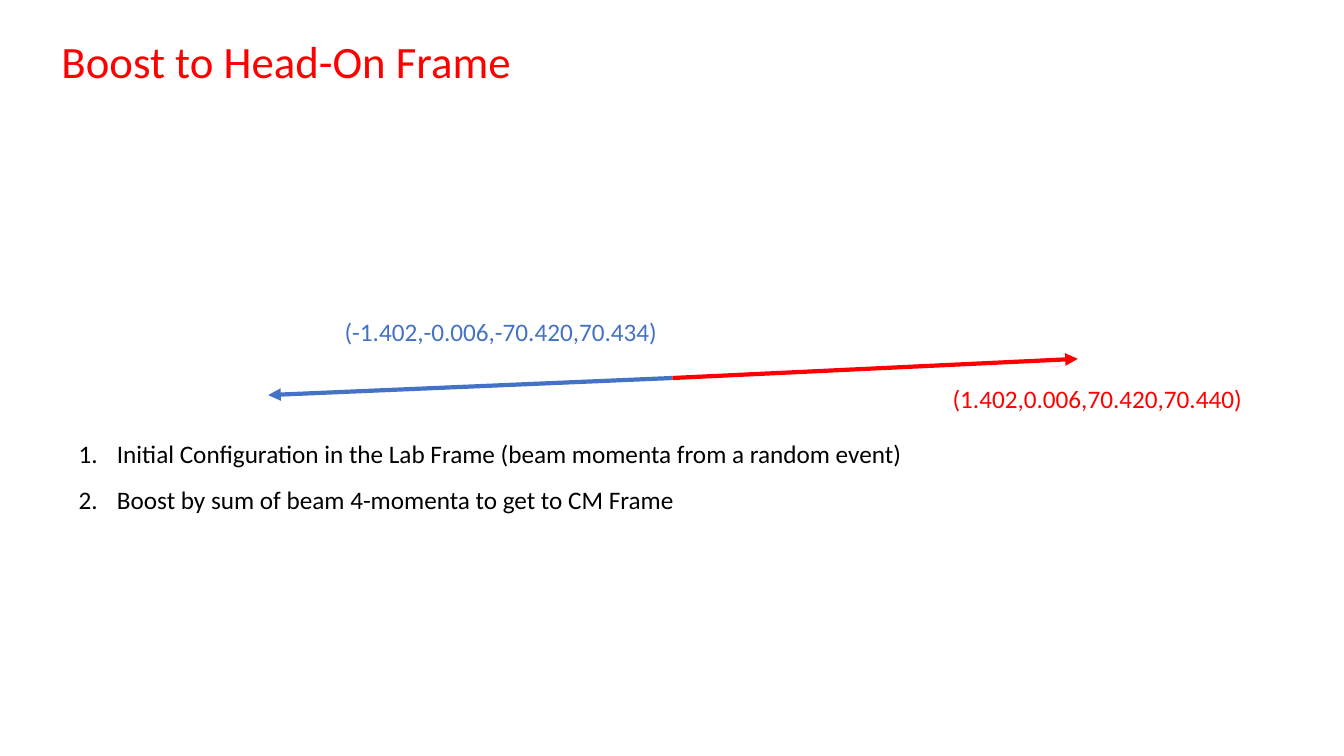
from pptx import Presentation
from pptx.dml.color import RGBColor
from pptx.enum.shapes import MSO_CONNECTOR
from pptx.enum.text import MSO_ANCHOR, MSO_AUTO_SIZE, PP_ALIGN
from pptx.oxml.ns import qn
from pptx.util import Inches, Pt
from lxml.etree import SubElement

COLORS = {"blue": "4472C4", "red": "FF0000", "black": "000000"}
FONT = "Calibri"
COLLISION_POINT = (6.67, 3.75)


def color(name):
    return RGBColor.from_string(COLORS[name])


def place(shape, left, top, width, height):
    shape.left, shape.top = Inches(left), Inches(top)
    shape.width, shape.height = Inches(width), Inches(height)


def prepare_frame(shape):
    frame = shape.text_frame
    frame.word_wrap = True
    frame.auto_size = MSO_AUTO_SIZE.NONE
    frame.vertical_anchor = MSO_ANCHOR.TOP
    return frame


def add_run(paragraph, text, size, color_name):
    paragraph.alignment = PP_ALIGN.LEFT
    run = paragraph.add_run()
    run.text = text
    run.font.name = FONT
    run.font.size = Pt(size)
    run.font.color.rgb = color(color_name)


def fill_title(title, text):
    place(title, 0.51, 0.28, 9.19, 0.64)
    add_run(prepare_frame(title).paragraphs[0], text, 32, "red")


def fill_steps(body, steps):
    place(body, 0.68, 4.15, 10.01, 0.96)
    frame = prepare_frame(body)
    for index, step in enumerate(steps):
        paragraph = frame.add_paragraph() if index else frame.paragraphs[0]
        add_run(paragraph, step, 18, "black")
        paragraph.line_spacing = 1.5
        paragraph.space_before = Pt(0)
        properties = paragraph._p.get_or_add_pPr()
        properties.set("marL", str(Inches(0.38)))
        properties.set("indent", str(-Inches(0.38)))
        SubElement(properties, qn("a:buFont"), typeface="+mj-lt")
        SubElement(properties, qn("a:buAutoNum"), type="arabicPeriod")


def add_beam(slide, tip, color_name):
    ends = [Inches(value) for value in COLLISION_POINT + tip]
    beam = slide.shapes.add_connector(MSO_CONNECTOR.STRAIGHT, *ends)
    beam.line.width = Pt(3)
    beam.line.color.rgb = color(color_name)
    SubElement(beam.line._get_or_add_ln(), qn("a:tailEnd"), type="triangle")
    SubElement(beam._element.spPr, qn("a:effectLst"))


def add_momentum(slide, left, top, text, color_name):
    momentum = slide.shapes.add_textbox(
        Inches(left), Inches(top), Inches(3.34), Inches(0.4))
    add_run(prepare_frame(momentum).paragraphs[0], text, 18, color_name)


def main():
    presentation = Presentation()
    presentation.slide_width = Inches(13.33)
    presentation.slide_height = Inches(7.5)
    slide = presentation.slides.add_slide(presentation.slide_layouts[1])

    fill_title(slide.shapes.title, "Boost to Head-On Frame")
    add_beam(slide, (2.66, 3.92), "blue")
    add_beam(slide, (10.69, 3.56), "red")
    add_momentum(slide, 3.32, 3.09, "(-1.402,-0.006,-70.420,70.434)", "blue")
    add_momentum(slide, 9.35, 3.75, "(1.402,0.006,70.420,70.440)", "red")
    fill_steps(slide.placeholders[1], [
        "Initial Configuration in the Lab Frame (beam momenta from a random event)",
        "Boost by sum of beam 4-momenta to get to CM Frame",
    ])
    presentation.save("out.pptx")


if __name__ == "__main__":
    main()
